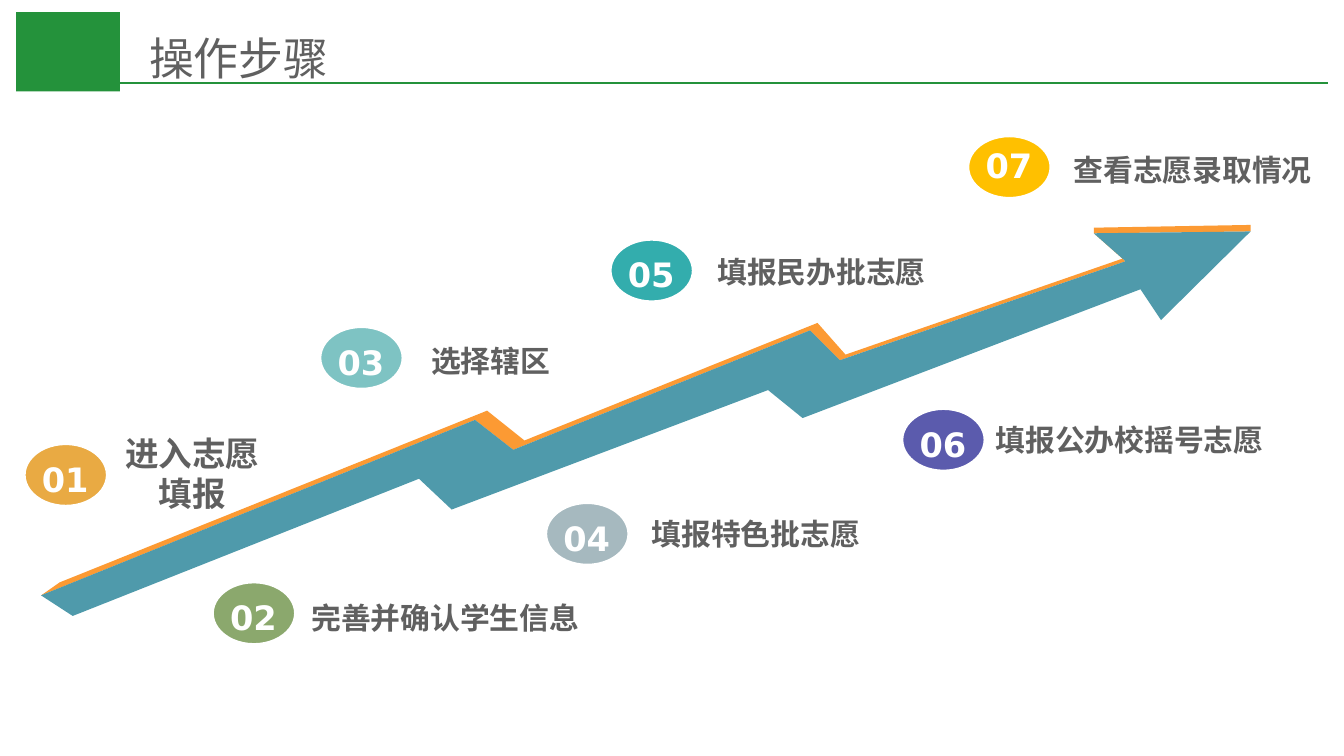
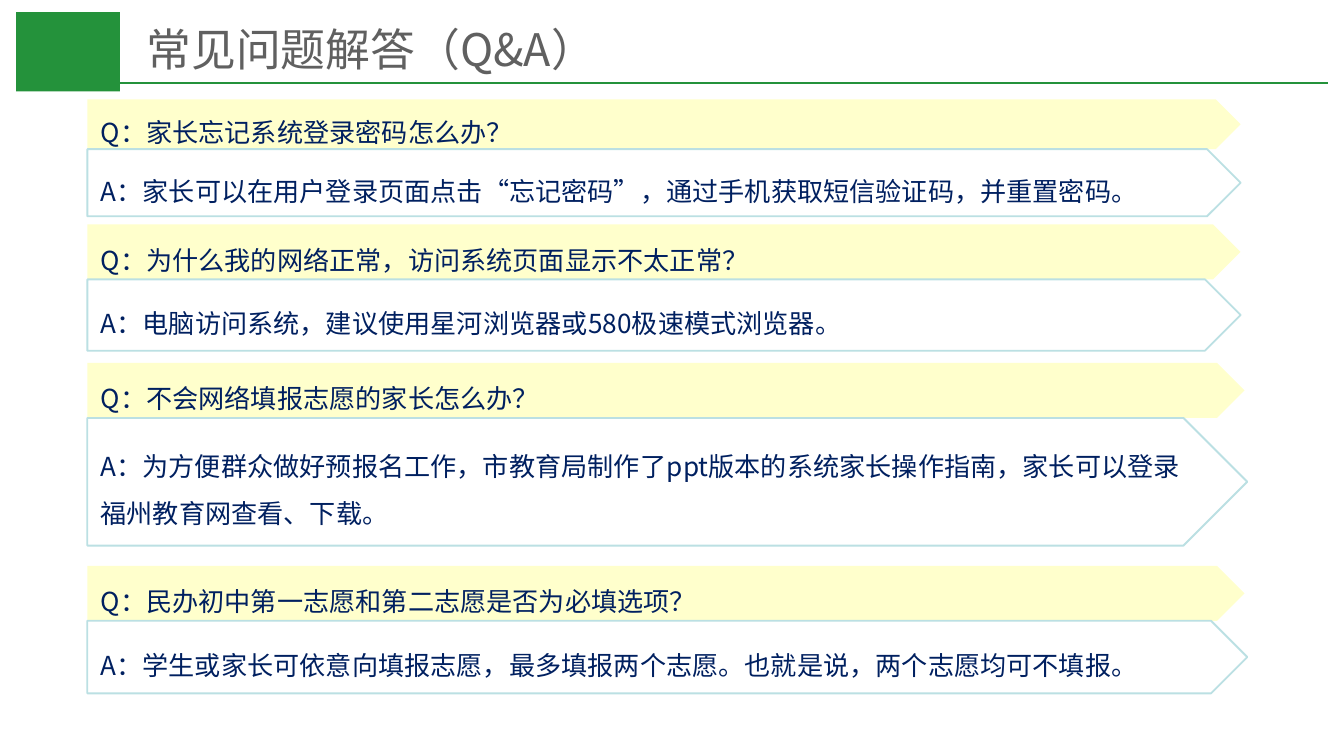
from dataclasses import dataclass
from typing import Any, Optional

import pptx
import pptx.dml.color
import pptx.enum.shapes
import pptx.enum.text
import pptx.oxml.ns
import pptx.util
from lxml import etree

Pt = pptx.util.Pt
qn = pptx.oxml.ns.qn
Align = pptx.enum.text.PP_ALIGN
Anchor = pptx.enum.text.MSO_ANCHOR
Shape = pptx.enum.shapes.MSO_SHAPE

# Shared style
CJK_FONT = "Noto Sans CJK SC"
NUMBER_FONT = "DejaVu Sans"
GREEN, GRAY, NAVY, WHITE = "24923B", "606060", "002060", "FFFFFF"
ARROW_FACE, ARROW_EDGE = "4F9AAB", "FC9A33"
QUESTION_FILL, ANSWER_LINE = "FFFFCC", "BBE0E3"
BADGE_WIDTH, BADGE_HEIGHT = 47.5, 36.5
PLATE_LEFT = 46.8


@dataclass
class Box:
    left: float
    top: float
    width: float
    height: float

    def lengths(self) -> tuple:
        return Pt(self.left), Pt(self.top), Pt(self.width), Pt(self.height)


@dataclass
class Step:
    color: str
    badge_left: float
    badge_top: float
    label: str
    label_box: Box
    wrap: bool = False
    size: float = 16
    number_drop: float = 6
    opacity: int = 80


@dataclass
class Answered:
    top: float
    question_height: float
    answer_height: float
    question_width: float
    answer_width: float
    question: str
    answer: str


STEPS = [
    Step("E49514", 11.5, 236.2, "进入志愿\n填报", Box(59.8, 228.2, 86.4, 51.1), size=18),
    Step("6E9349", 112.3, 310.3, "完善并确认学生信息", Box(159.8, 317.5, 158.4, 26.6)),
    Step("5EB4B4", 169.9, 173.5, "选择辖区", Box(223.9, 180, 308.9, 26.6), wrap=True),
    Step("90A8B0", 290.9, 267.8, "填报特色批志愿", Box(342, 272.9, 153.4, 26.6), wrap=True),
    Step("009999", 325.4, 126.7, "填报民办批志愿", Box(377.3, 132.5, 126.7, 26.6)),
    Step("333399", 481.7, 217.4, "填报公办校摇号志愿", Box(526.3, 222.5, 158.4, 26.6)),
    Step("FFC000", 517, 71.3, "查看志愿录取情况", Box(568.1, 77.8, 142.6, 26.6),
         number_drop=3, opacity=100),
]

QUESTIONS = [
    Answered(53.3, 26.6, 36, 617.8, 617.8, "Q：家长忘记系统登录密码怎么办？",
             "A：家长可以在用户登录页面点击“忘记密码”，通过手机获取短信验证码，并重置密码。"),
    Answered(120.2, 29.5, 38.2, 617.8, 617.8, "Q：为什么我的网络正常，访问系统页面显示不太正常？",
             "A：电脑访问系统，建议使用星河浏览器或580极速模式浏览器。"),
    Answered(194.4, 29.5, 68.4, 619.9, 621.4, "Q：不会网络填报志愿的家长怎么办？",
             "A：为方便群众做好预报名工作，市教育局制作了ppt版本的系统家长操作指南，"
             "家长可以登录福州教育网查看、下载。"),
    Answered(303.1, 29.5, 38.9, 619.9, 621.4, "Q：民办初中第一志愿和第二志愿是否为必填选项？",
             "A：学生或家长可依意向填报志愿，最多填报两个志愿。也就是说，两个志愿均可不填报。"),
]

# Zigzag arrow: upper edge of the face, its lower edge, and the bright rim above
FACE_TOP = [(22, 319), (254.5, 225), (275, 241), (434, 177), (450, 193),
            (603, 140), (586, 125), (670, 124)]
FACE_BOTTOM = [(622, 171.5), (611, 155), (430, 224), (411.5, 209),
               (242, 273), (224.5, 256.5), (39, 330)]
RIM_TOP = [(32, 312), (261, 220), (281, 236), (438, 173), (453, 190),
           (603, 138), (586, 125), (586, 122), (670, 120.5)]


def rgb(color: str) -> pptx.dml.color.RGBColor:
    return pptx.dml.color.RGBColor.from_string(color)


def paint(shape: Any, fill: str, line: Optional[str] = None,
          line_width: float = 1, opacity: int = 100) -> None:
    shape.shadow.inherit = False
    shape.fill.solid()
    shape.fill.fore_color.rgb = rgb(fill)
    if opacity < 100:
        color = shape.element.spPr.find(qn("a:solidFill")).find(qn("a:srgbClr"))
        etree.SubElement(color, qn("a:alpha"), val=str(opacity * 1000))
    if line:
        shape.line.color.rgb = rgb(line)
        shape.line.width = Pt(line_width)
    else:
        shape.line.fill.background()


def write(shape: Any, text: str, size: float, color: str, font: str = CJK_FONT,
          bold: bool = False, align: Any = Align.LEFT, anchor: Any = Anchor.TOP,
          spacing: Optional[float] = None, wrap: bool = True) -> None:
    frame = shape.text_frame
    frame.text = text
    frame.word_wrap = wrap
    frame.vertical_anchor = anchor
    for paragraph in frame.paragraphs:
        paragraph.alignment = align
        paragraph.line_spacing = spacing
        for run in paragraph.runs:
            run.font.name = font
            run.font.size = Pt(size)
            run.font.bold = bold
            run.font.color.rgb = rgb(color)
    for properties in shape.element.iter(qn("a:rPr")):
        etree.SubElement(properties, qn("a:ea"), typeface=font)


def add_textbox(slide: Any, box: Box, text: str, size: float, color: str,
                **style: Any) -> None:
    shape = slide.shapes.add_textbox(*box.lengths())
    write(shape, text, size, color, bold=True, **style)
    shape.text_frame.auto_size = pptx.enum.text.MSO_AUTO_SIZE.SHAPE_TO_FIT_TEXT


def add_titled_slide(presentation: Any, title: str, box: Box, anchor: Any,
                     spacing: Optional[float] = None) -> Any:
    slide = presentation.slides.add_slide(presentation.slide_layouts[5])
    shape = slide.shapes.title
    shape.left, shape.top, shape.width, shape.height = box.lengths()
    write(shape, title, 24, GRAY, anchor=anchor, spacing=spacing)
    shape.text_frame.auto_size = pptx.enum.text.MSO_AUTO_SIZE.NONE
    return slide


def add_header_to_layout(slide: Any) -> None:
    """Build the green block and rule, then move them to the shared layout."""
    layout = slide.slide_layout
    for placeholder in list(layout.placeholders)[1:]:
        layout.shapes.element.remove(placeholder.element)
    block = slide.shapes.add_shape(Shape.RECTANGLE, *Box(8.6, 6.5, 55.7, 42.5).lengths())
    paint(block, GREEN)
    rule = slide.shapes.add_connector(pptx.enum.shapes.MSO_CONNECTOR.STRAIGHT,
                                      Pt(64.3), Pt(44.7), Pt(711.4), Pt(44.7))
    rule.line.color.rgb = rgb(GREEN)
    rule.line.width = Pt(1)
    etree.SubElement(rule.element.spPr, qn("a:effectLst"))
    for shape in (block, rule):
        layout.shapes.element.append(shape.element)


def add_outline(slide: Any, points: list, fill: str) -> None:
    corners = [(Pt(x), Pt(y)) for x, y in points]
    builder = slide.shapes.build_freeform(*corners[0], scale=1.0)
    builder.add_line_segments(corners[1:], close=True)
    paint(builder.convert_to_shape(), fill)


def add_step(slide: Any, number: int, step: Step) -> None:
    badge = Box(step.badge_left, step.badge_top, BADGE_WIDTH, BADGE_HEIGHT)
    oval = slide.shapes.add_shape(Shape.OVAL, *badge.lengths())
    paint(oval, step.color, WHITE, 4.5, step.opacity)
    number_box = Box(badge.left + 2.5, badge.top + step.number_drop, 42, 28.8)
    add_textbox(slide, number_box, f"{number:02d}", 18, WHITE,
                font=NUMBER_FONT, align=Align.CENTER)
    align = Align.CENTER if "\n" in step.label else Align.LEFT
    add_textbox(slide, step.label_box, step.label, step.size, GRAY,
                align=align, wrap=step.wrap)


def add_plate(slide: Any, box: Box, text: str, fill: str,
              line: Optional[str] = None) -> None:
    plate = slide.shapes.add_shape(Shape.PENTAGON, *box.lengths())
    paint(plate, fill, line)
    write(plate, text, 14, NAVY, anchor=Anchor.MIDDLE, spacing=1.5)


def main() -> None:
    presentation = pptx.Presentation()
    presentation.slide_width, presentation.slide_height = Pt(720), Pt(405)

    # Steps along the rising arrow
    slide = add_titled_slide(presentation, "操作步骤", Box(72.7, 9.4, 612, 39.6),
                             Anchor.BOTTOM, spacing=2)
    add_header_to_layout(slide)
    add_outline(slide, FACE_TOP[:1] + RIM_TOP + FACE_TOP[:0:-1], ARROW_EDGE)
    add_outline(slide, FACE_TOP + FACE_BOTTOM, ARROW_FACE)
    for number, step in enumerate(STEPS, start=1):
        add_step(slide, number, step)

    # Questions, each with its answer directly below
    slide = add_titled_slide(presentation, "常见问题解答（Q&A）",
                             Box(71.3, 13.7, 612, 24.5), Anchor.MIDDLE)
    for item in QUESTIONS:
        add_plate(slide, Box(PLATE_LEFT, item.top, item.question_width, item.question_height),
                  item.question, QUESTION_FILL)
        add_plate(slide, Box(PLATE_LEFT, item.top + item.question_height,
                             item.answer_width, item.answer_height),
                  item.answer, WHITE, ANSWER_LINE)

    presentation.save("out.pptx")


if __name__ == "__main__":
    main()
